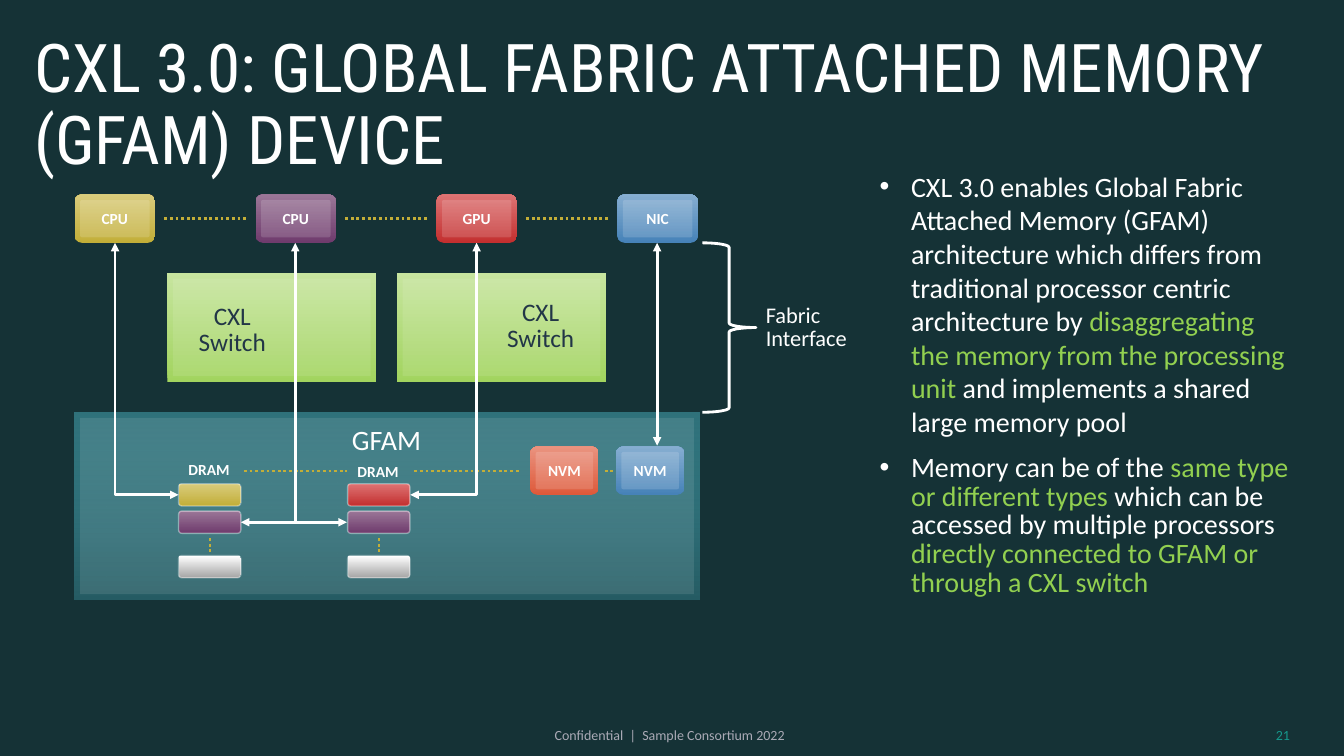
import pptx
import pptx.util
import pptx.dml.color
import pptx.enum.dml
import pptx.enum.shapes
import pptx.enum.text
import pptx.oxml
import pptx.oxml.ns

Cm = pptx.util.Cm
Pt = pptx.util.Pt
Shapes = pptx.enum.shapes.MSO_SHAPE
Connectors = pptx.enum.shapes.MSO_CONNECTOR
Align = pptx.enum.text.PP_ALIGN
Anchor = pptx.enum.text.MSO_ANCHOR

WHITE = "FFFFFF"
LIME = "92D050"
GOLD = ("C2AE38", "D9CC7C")
PURPLE = ("6F3B6D", "9A7697")
RED = ("C32F2F", "DD7373")
BLUE = ("4682B8", "86AED1")
ORANGE = ("DE593A", "EA937F")
GREY = ("A6A6A6", "FFFFFF")
GREEN = ("A2D45F", "C7E59F")
TEAL = ("275D65", "46A6B3")


def color(value):
    return pptx.dml.color.RGBColor.from_string(value)


def add_xml(parent, tag, **attributes):
    child = pptx.oxml.parse_xml(f"<a:{tag} {pptx.oxml.ns.nsdecls('a')}/>")
    for name, value in attributes.items():
        child.set(name, str(value))
    parent.append(child)


class Diagram:
    font = "Calibri"
    line_width = 2

    def __init__(self, slide):
        self.slide = slide
        slide.background.fill.solid()
        slide.background.fill.fore_color.rgb = color("153236")

    def fade(self, element, percent):
        colors = list(element.iter(pptx.oxml.ns.qn("a:srgbClr")))
        add_xml(colors[-1], "alpha", val=percent * 1000)

    def shape(self, kind, left, top, width, height, corner=None):
        shape = self.slide.shapes.add_shape(kind, Cm(left), Cm(top), Cm(width), Cm(height))
        shape.shadow.inherit = False
        shape.line.fill.background()
        if corner is not None:
            shape.adjustments[0] = corner
        return shape

    def block(self, kind, left, top, width, height, gradient, corner=None):
        shape = self.shape(kind, left, top, width, height, corner)
        shape.fill.gradient()
        shape.fill.gradient_angle = 90
        for stop, value in zip(shape.fill.gradient_stops, gradient):
            stop.color.rgb = color(value)
        return shape

    def sheen(self, kind, left, top, width, height, opacity, corner=None, inset=0.14):
        shape = self.shape(kind, left + inset, top + inset, width - 2 * inset, height - 2 * inset, corner)
        shape.fill.solid()
        shape.fill.fore_color.rgb = color(WHITE)
        self.fade(shape.fill._xPr, opacity)

    def panel(self, left, top, width, height, gradient, opacity=None):
        shape = self.block(Shapes.RECTANGLE, left, top, width, height, gradient)
        if opacity:
            self.fade(shape.fill._xPr, opacity)
        self.sheen(Shapes.RECTANGLE, left, top, width, height, 10)

    def chip(self, label, left, top, width, gradient, height=1.22):
        self.block(Shapes.ROUNDED_RECTANGLE, left, top, width, height, gradient, 0.15)
        self.sheen(Shapes.ROUNDED_RECTANGLE, left, top, width, height, 15, 0.05)
        self.text([label], left + 0.14, top + 0.3, width - 0.28, 0.66, 11,
                  align=Align.CENTER, bold=True, inset=0.13)

    def cell(self, left, top, gradient):
        shape = self.block(Shapes.ROUNDED_RECTANGLE, left, top, 1.57, 0.56, gradient, 0.15)
        shape.line.color.rgb = color(WHITE)
        shape.line.width = Pt(1)
        self.fade(shape.line._ln, 40)

    def brace(self, left, top, width, height):
        shape = self.shape(Shapes.RIGHT_BRACE, left, top, width, height)
        shape.fill.background()
        shape.line.color.rgb = color(WHITE)
        shape.line.width = Pt(self.line_width)

    def text(self, lines, left, top, width, height, size, fill=WHITE, align=Align.LEFT,
             spacing=0.85, bold=False, font=None, anchor=Anchor.TOP, inset=None, wrap=True):
        box = self.slide.shapes.add_textbox(Cm(left), Cm(top), Cm(width), Cm(height))
        frame = box.text_frame
        frame.word_wrap = wrap
        frame.vertical_anchor = anchor
        if inset is not None:
            frame.margin_left = frame.margin_right = Cm(inset)
            frame.margin_top = frame.margin_bottom = Cm(inset)
        for number, line in enumerate(lines):
            paragraph = frame.add_paragraph() if number else frame.paragraphs[0]
            paragraph.alignment = align
            paragraph.line_spacing = spacing
            paragraph.font.size = Pt(size)
            paragraph.font.name = font or self.font
            paragraph.font.bold = bold
            paragraph.font.color.rgb = color(fill)
            for part, part_color in [(line, fill)] if isinstance(line, str) else line:
                run = paragraph.add_run()
                run.text = part
                if part_color != fill:
                    run.font.color.rgb = color(part_color)
        return frame

    def bullets(self, lines, left, top, width, height, size):
        frame = self.text(lines, left, top, width, height, size)
        frame.paragraphs[0].line_spacing = 1.0
        for paragraph in frame.paragraphs:
            paragraph.space_before = paragraph.space_after = Pt(6)
            properties = paragraph._p.get_or_add_pPr()
            properties.set("marL", str(Cm(0.79)))
            properties.set("indent", str(Cm(-0.79)))
            add_xml(properties, "buFont", typeface="Arial")
            add_xml(properties, "buChar", char="•")

    def line(self, start, end, stroke, kind=Connectors.STRAIGHT, dotted=False, head=False, tail=False):
        connector = self.slide.shapes.add_connector(kind, *map(Cm, start + end))
        connector.line.color.rgb = color(stroke)
        connector.line.width = Pt(self.line_width)
        if dotted:
            connector.line.dash_style = pptx.enum.dml.MSO_LINE.ROUND_DOT
        for tag, wanted in (("headEnd", head), ("tailEnd", tail)):
            if wanted:
                add_xml(connector.line._ln, tag, type="triangle")
        add_xml(connector._element.spPr, "effectLst")
        return connector

    def dots(self, start, end):
        self.line(start, end, GOLD[0], dotted=True)

    def elbow(self, start, end):
        across, down = end[0] - start[0], end[1] - start[1]
        middle_x, middle_y = start[0] + across / 2, start[1] + down / 2
        reach = down / 2 if across < 0 else -down / 2
        rise = abs(across) / 2
        connector = self.line((middle_x - reach, middle_y - rise), (middle_x + reach, middle_y + rise),
                              WHITE, Connectors.ELBOW, head=True, tail=True)
        properties = connector._element.spPr
        properties.find(pptx.oxml.ns.qn("a:prstGeom")).set("prst", "bentConnector2")
        rotation = 90 if across < 0 else 270
        properties.find(pptx.oxml.ns.qn("a:xfrm")).set("rot", str(rotation * 60000))


def main():
    presentation = pptx.Presentation()
    presentation.slide_width = Cm(33.87)
    presentation.slide_height = Cm(19.05)
    diagram = Diagram(presentation.slides.add_slide(presentation.slide_layouts[6]))

    diagram.panel(1.88, 10.39, 15.75, 4.72, TEAL, 55)
    for panel_left, label_left, label_top in ((10.01, 12.01, 7.47), (4.22, 4.24, 7.57)):
        diagram.panel(panel_left, 6.88, 5.26, 2.74, GREEN)
        diagram.text(["CXL", "Switch"], label_left, label_top, 3.23, 1.57, 18, "223647", Align.CENTER)

    diagram.text(["Confidential  |  Sample Consortium 2022"], 7.26, 18.19, 19.23, 0.66, 10, "AAAAB6",
                 Align.CENTER, 1.0, anchor=Anchor.MIDDLE)
    diagram.text(["21"], 31.06, 18.01, 1.7, 1.02, 10, "16978B", Align.RIGHT, 1.0, anchor=Anchor.MIDDLE)
    diagram.text(["CXL 3.0: GLOBAL FABRIC ATTACHED MEMORY (GFAM) DEVICE"], 0.61, 0.74, 32.64, 1.57, 48,
                 spacing=0.9, font="Roboto Condensed")
    diagram.bullets([
        [("CXL 3.0 enables Global Fabric Attached Memory (GFAM) architecture which differs from "
          "traditional processor centric architecture by ", WHITE),
         ("disaggregating the memory from the processing unit ", LIME),
         ("and implements a shared large memory pool", WHITE)],
        [("Memory can be of the ", WHITE), ("same type or different types", LIME),
         (" which can be accessed by multiple processors ", WHITE),
         ("directly connected to GFAM or through a CXL switch", LIME)],
    ], 21.92, 4.14, 10.85, 13.69, 20)

    diagram.text(["GFAM"], 8.56, 10.64, 2.36, 0.99, 20, align=Align.CENTER, wrap=False)
    diagram.brace(17.7, 6.12, 1.35, 4.27)
    diagram.text(["Fabric", "Interface"], 19.05, 7.57, 2.79, 1.42, 16)

    for start, end in ((6.15, 8.74), (10.44, 13.13), (15.24, 15.44)):
        diagram.dots((start, 11.87), (end, 11.87))
    diagram.elbow((2.9, 6.12), (4.5, 12.47))
    diagram.elbow((7.44, 6.12), (6.07, 13.16))
    diagram.line((7.44, 13.16), (8.74, 13.16), WHITE, tail=True)
    diagram.elbow((12.01, 6.12), (10.34, 12.47))
    diagram.line((16.56, 6.12), (16.56, 11.23), WHITE, head=True, tail=True)

    devices = (("CPU", GOLD), ("CPU", PURPLE), ("GPU", RED), ("NIC", BLUE))
    for number, (label, gradient) in enumerate(devices):
        left = 1.88 + 4.56 * number
        diagram.chip(label, left, 4.9, 2.03, gradient)
        if number < len(devices) - 1:
            diagram.dots((left + 2.26, 5.51), (left + 4.38, 5.51))
    diagram.chip("NVM", 15.52, 11.25, 1.73, BLUE)
    diagram.chip("NVM", 13.36, 11.25, 1.73, ORANGE)

    for left, label_top, first in ((4.5, 11.53, GOLD), (8.76, 11.58, RED)):
        diagram.text(["DRAM"], left, label_top, 1.57, 0.66, 11, bold=True, wrap=False)
        for top, gradient in ((12.19, first), (12.88, PURPLE), (14, GREY)):
            diagram.cell(left, top, gradient)
        diagram.dots((left + 0.79, 13.56), (left + 0.79, 13.93))

    presentation.save("out.pptx")


if __name__ == "__main__":
    main()
